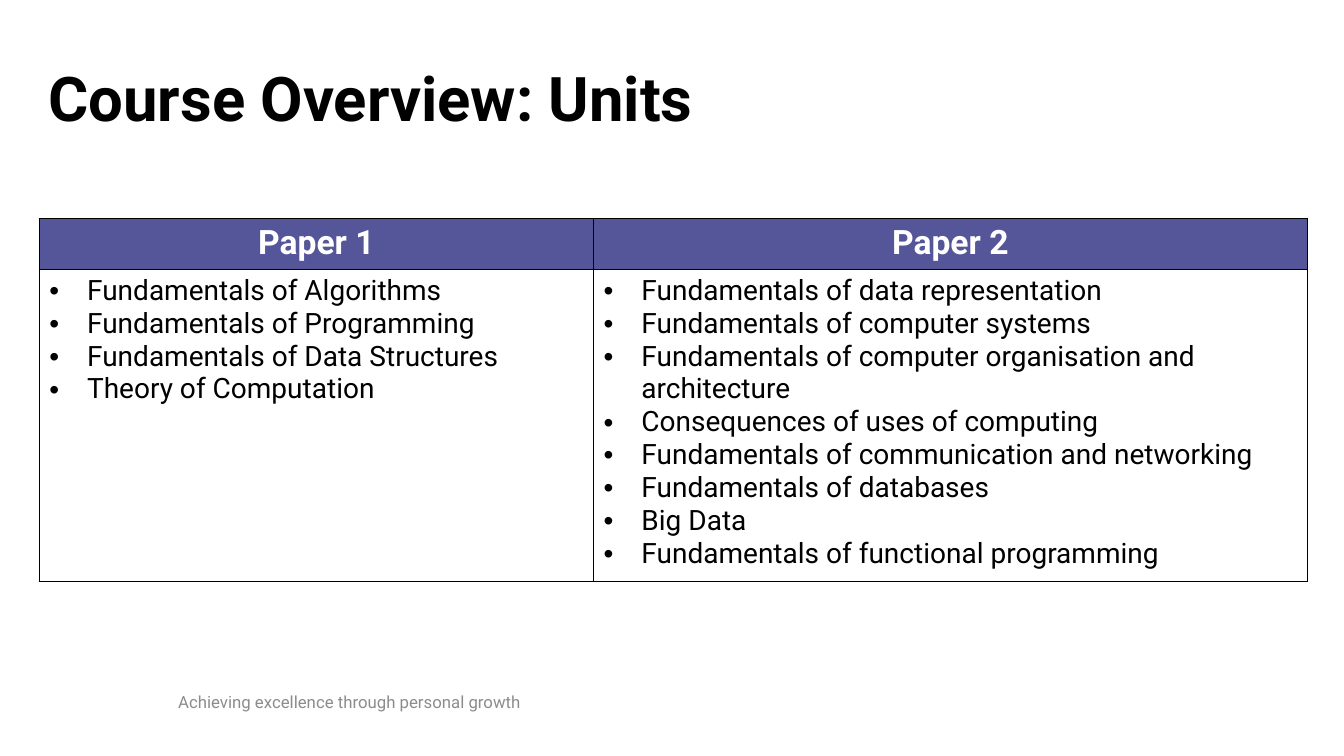
from lxml.etree import SubElement
from pptx import Presentation
from pptx.dml.color import RGBColor
from pptx.enum.text import MSO_ANCHOR, PP_ALIGN
from pptx.oxml.ns import qn
from pptx.util import Cm, Pt

# Content
TITLE = "Course Overview: Units"
FOOTER = "Achieving excellence through personal growth"
PAPERS = {
    "Paper 1": [
        "Fundamentals of Algorithms",
        "Fundamentals of Programming",
        "Fundamentals of Data Structures",
        "Theory of Computation",
    ],
    "Paper 2": [
        "Fundamentals of data representation",
        "Fundamentals of computer systems",
        "Fundamentals of computer organisation and architecture",
        "Consequences of uses of computing",
        "Fundamentals of communication and networking",
        "Fundamentals of databases",
        "Big Data",
        "Fundamentals of functional programming",
    ],
}

# Layout in centimetres, and colours
TITLE_AREA = (0.97, 1.52, 25.98, 2.06)
FOOTER_AREA = (4.24, 17.17, 11.43, 1.02)
TABLE_LEFT, TABLE_TOP = 0.99, 5.51
COLUMN_WIDTHS = (13.97, 17.98)
ROW_HEIGHTS = (1.25, 7.72)
BULLET_INDENT = 0.95
BLACK, WHITE, GREY, PURPLE = "000000", "FFFFFF", "8C8C8C", "555599"


def color(value):
    return RGBColor.from_string(value)


def write(frame, lines, size, ink=BLACK, bold=False, align=PP_ALIGN.LEFT,
          spacing=1.0, bullet=False):
    frame.word_wrap = True
    for index, line in enumerate(lines):
        para = frame.paragraphs[0] if index == 0 else frame.add_paragraph()
        para.alignment = align
        para.line_spacing = spacing
        if bullet:
            properties = para._p.get_or_add_pPr()
            properties.set("marL", str(Cm(BULLET_INDENT)))
            properties.set("indent", str(-Cm(BULLET_INDENT)))
            SubElement(properties, qn("a:buFont"), typeface="Arial")
            SubElement(properties, qn("a:buChar"), char="•")
        span = para.add_run()
        span.text = line
        span.font.name = "Roboto"
        span.font.size = Pt(size)
        span.font.bold = bold
        span.font.color.rgb = color(ink)


def add_text(page, area, text, **style):
    box = page.shapes.add_textbox(*map(Cm, area))
    box.text_frame.vertical_anchor = MSO_ANCHOR.MIDDLE
    write(box.text_frame, [text], **style)


def style_cell(cell, fill=None):
    properties = cell._tc.get_or_add_tcPr()
    for side in ("lnL", "lnR", "lnT", "lnB"):
        border = SubElement(properties, qn(f"a:{side}"), w=str(Pt(1)))
        paint = SubElement(border, qn("a:solidFill"))
        SubElement(paint, qn("a:srgbClr"), val=BLACK)
    if fill:
        cell.fill.solid()
        cell.fill.fore_color.rgb = color(fill)
    else:
        cell.fill.background()


deck = Presentation()
deck.slide_width, deck.slide_height = Cm(33.87), Cm(19.05)
page = deck.slides.add_slide(deck.slide_layouts[6])

# Title and footer
add_text(page, TITLE_AREA, TITLE, size=44, bold=True, spacing=0.9)
add_text(page, FOOTER_AREA, FOOTER, size=12, ink=GREY)

# Table of units, one column for each paper
table = page.shapes.add_table(
    len(ROW_HEIGHTS), len(PAPERS), Cm(TABLE_LEFT), Cm(TABLE_TOP),
    Cm(sum(COLUMN_WIDTHS)), Cm(sum(ROW_HEIGHTS))).table
table.horz_banding = False
for row, height in zip(table.rows, ROW_HEIGHTS):
    row.height = Cm(height)
for number, (paper, units) in enumerate(PAPERS.items()):
    table.columns[number].width = Cm(COLUMN_WIDTHS[number])
    header, body = table.cell(0, number), table.cell(1, number)
    style_cell(header, PURPLE)
    style_cell(body)
    write(header.text_frame, [paper], size=24, ink=WHITE, bold=True,
          align=PP_ALIGN.CENTER)
    write(body.text_frame, units, size=20, bullet=True)

deck.save("out.pptx")
